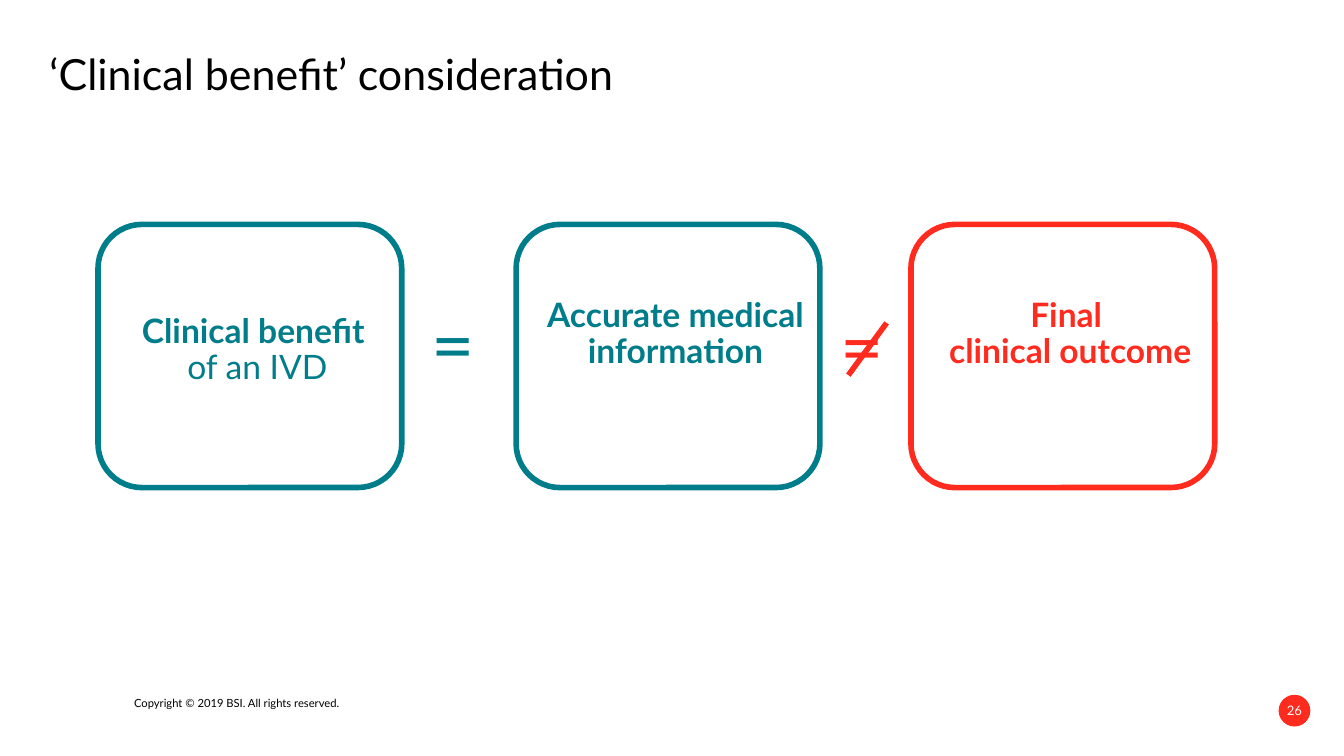
from dataclasses import dataclass

from pptx import Presentation
from pptx.dml.color import RGBColor
from pptx.enum.shapes import MSO_CONNECTOR, MSO_SHAPE
from pptx.enum.text import MSO_ANCHOR, MSO_AUTO_SIZE, PP_ALIGN
from pptx.oxml.ns import qn
from pptx.util import Pt


@dataclass(frozen=True)
class Theme:
    font: str = "Lato"
    teal: str = "007D8A"
    red: str = "FF2B1F"
    black: str = "000000"
    white: str = "FFFFFF"
    title_size: int = 23
    card_size: int = 18
    sign_size: int = 40
    page_size: int = 7
    footer_size: int = 6
    stroke: int = 3


THEME = Theme()


def rgb(color):
    return RGBColor.from_string(color)


def place(shape, box):
    shape.left, shape.top, shape.width, shape.height = map(Pt, box)


def write(shape, lines, *, size, color, bold=(False,), align=PP_ALIGN.LEFT,
          anchor=MSO_ANCHOR.TOP, spacing=None, wrap=True, inset=None):
    frame = shape.text_frame
    frame.auto_size = MSO_AUTO_SIZE.NONE
    frame.word_wrap = wrap
    frame.vertical_anchor = anchor
    if inset is not None:
        frame.margin_left = frame.margin_right = Pt(inset)
        frame.margin_top = frame.margin_bottom = Pt(inset)
    paragraph = frame.paragraphs[0]
    paragraph.alignment = align
    paragraph.line_spacing = spacing
    for index, line in enumerate(lines):
        if index:
            paragraph.add_line_break()
        run = paragraph.add_run()
        run.text = line
        run.font.name = THEME.font
        run.font.size = Pt(size)
        run.font.color.rgb = rgb(color)
        run.font.bold = bold[index % len(bold)]


def add_text(slide, box, lines, **style):
    write(slide.shapes.add_textbox(*map(Pt, box)), lines, **style)


def add_title(slide, box, heading):
    title = slide.shapes.title
    place(title, box)
    write(title, [heading], size=THEME.title_size, color=THEME.black,
          spacing=0.9, inset=0)


def add_card(slide, box, lines, color, label_drop=36, bold=(True,)):
    left, top, width, height = box
    frame = slide.shapes.add_shape(MSO_SHAPE.ROUNDED_RECTANGLE, *map(Pt, box))
    frame.shadow.inherit = False
    frame.fill.solid()
    frame.fill.fore_color.rgb = rgb(THEME.white)
    frame.line.color.rgb = rgb(color)
    frame.line.width = Pt(THEME.stroke)
    add_text(slide, (left + 9, top + label_drop, width - 10, height / 2), lines,
             size=THEME.card_size, color=color, bold=bold,
             align=PP_ALIGN.CENTER, spacing=0.9)


def add_equals(slide, box, color, struck=False):
    left, top, width, height = box
    add_text(slide, box, ["="], size=THEME.sign_size, color=color, wrap=False)
    if struck:
        slash = slide.shapes.add_connector(
            MSO_CONNECTOR.STRAIGHT, Pt(left + 32), Pt(top + 16),
            Pt(left + 11.5), Pt(top + 44))
        slash.line.color.rgb = rgb(color)
        slash.line.width = Pt(THEME.stroke)
        properties = slash._element.spPr
        properties.append(properties.makeelement(qn("a:effectLst"), {}))


def add_comparison(slide, box):
    left, top, width, height = box
    card_width = 162.75
    answer_left, outcome_left = left + 224, left + width - card_width
    add_card(slide, (left, top, card_width, height),
             ["Clinical benefit ", "of an IVD"], THEME.teal,
             label_drop=44.75, bold=(True, False))
    add_card(slide, (answer_left, top, card_width, height),
             ["Accurate medical information"], THEME.teal)
    add_card(slide, (outcome_left, top, card_width, height),
             ["Final ", "clinical outcome"], THEME.red)
    add_equals(slide, (left + 171.5, top + 36, 44, 55.5), THEME.teal)
    add_equals(slide, (left + 390.5, top + 36.75, 44, 55.5), THEME.red, struck=True)


def add_footer(slide, box):
    left, top, width, height = box
    add_text(slide, (left, top - 3, 243.5, 13),
             ["Copyright © 2019 BSI. All rights reserved."],
             size=THEME.footer_size, color=THEME.black)
    badge = slide.shapes.add_shape(
        MSO_SHAPE.OVAL, Pt(left + width - height), Pt(top), Pt(height), Pt(height))
    badge.shadow.inherit = False
    badge.fill.solid()
    badge.fill.fore_color.rgb = rgb(THEME.red)
    badge.line.fill.background()
    write(badge, ["26"], size=THEME.page_size, color=THEME.white,
          align=PP_ALIGN.CENTER, anchor=MSO_ANCHOR.MIDDLE, inset=0)


def main():
    deck = Presentation()
    deck.slide_width, deck.slide_height = Pt(720), Pt(405)
    slide = deck.slides.add_slide(deck.slide_layouts[5])
    add_title(slide, (26.5, 28.75, 667, 25), "‘Clinical benefit’ consideration")
    add_comparison(slide, (52.5, 120.25, 598.25, 141))
    add_footer(slide, (64.75, 372.25, 637.25, 17))
    deck.save("out.pptx")


if __name__ == "__main__":
    main()
